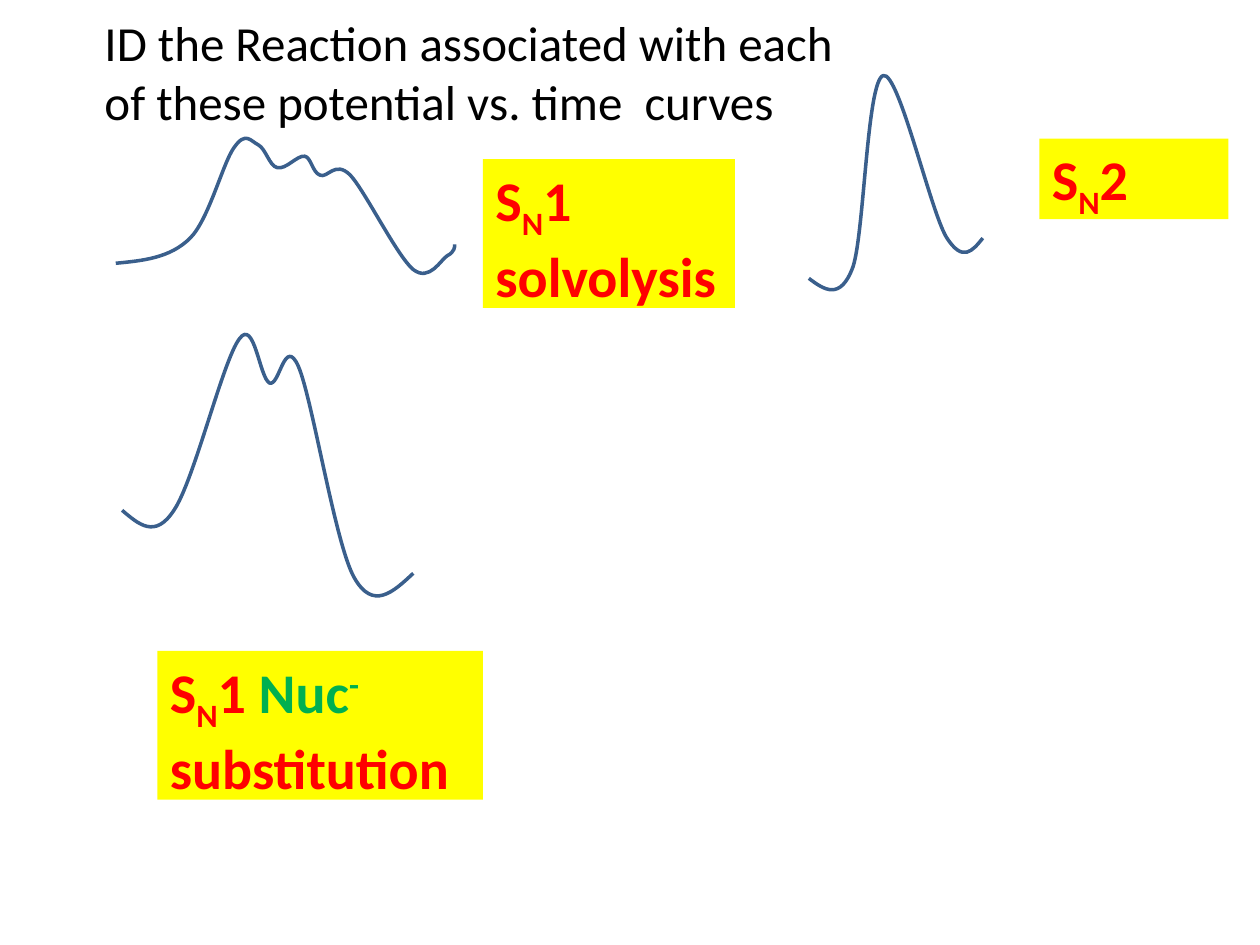
from dataclasses import dataclass

from lxml.etree import SubElement
from pptx import Presentation
from pptx.dml.color import RGBColor as Color
from pptx.enum.shapes import MSO_SHAPE as Shape
from pptx.enum.text import MSO_ANCHOR as Anchor, MSO_AUTO_SIZE as AutoSize, PP_ALIGN as Align
from pptx.oxml.ns import qn
from pptx.util import Pt


@dataclass(frozen=True)
class Theme:
    font: str = "Calibri"
    title_size: int = 28
    label_size: int = 32
    curve_width: int = 2
    ink: Color = Color(0, 0, 0)
    curve: Color = Color(0x3A, 0x5F, 0x8C)
    label_fill: Color = Color(0xFF, 0xFF, 0)
    label_text: Color = Color(0xFF, 0, 0)
    nucleophile: Color = Color(0, 0xB0, 0x50)


THEME = Theme()
SUBSCRIPT, SUPERSCRIPT = -25, 30

# Each curve: its box, then a start point followed by three points per Bézier segment.
SOLVOLYSIS_CURVE = (66.2, 79.2, 194.4, 77), [
    (66.2, 150.5),
    (81.4, 149), (97.2, 147.6), (108.7, 136.1),
    (119.5, 125.3), (127.4, 92.9), (133.9, 84.2),
    (140.4, 74.9), (143.3, 80.6), (147.6, 82.8),
    (151.9, 85), (154.1, 95), (158.4, 95.8),
    (163.4, 97.2), (169.9, 88.6), (174.2, 89.3),
    (177.8, 90), (178.6, 98.6), (182.9, 100.1),
    (187.2, 102.2), (191.5, 91.4), (200.2, 100.1),
    (208.8, 109.4), (226.8, 146.2), (236.2, 154.1),
    (245.5, 161.3), (252, 148.3), (255.6, 146.2),
    (259.9, 144), (259.9, 141.1), (259.9, 139.7),
]
SN2_CURVE = (462.2, 43.2, 99.4, 122.4), [
    (462.2, 159.1),
    (470.9, 165.6), (480.2, 172.1), (487.4, 152.6),
    (493.9, 133.2), (495.4, 46.1), (504.7, 43.2),
    (513.4, 40.3), (531.4, 119.5), (540.7, 135.4),
    (550.1, 150.5), (555.8, 143.3), (561.6, 136.1),
]
SUBSTITUTION_CURVE = (69.8, 190.8, 165.6, 149.8), [
    (69.8, 291.6),
    (79.2, 299.5), (88.6, 308.2), (99.4, 291.6),
    (110.9, 275), (127.4, 205.9), (136.8, 193.7),
    (145.4, 181.4), (148.3, 216), (154.1, 218.9),
    (159.8, 221), (162.7, 191.5), (170.6, 209.5),
    (178.6, 228.2), (191.5, 310.3), (202.3, 329.8),
    (213.1, 349.2), (224.6, 338.4), (236.2, 327.6),
]

# Each label: its box, then runs of text, colour and baseline shift in percent.
SN_RUNS = [("S", THEME.label_text, 0), ("N", THEME.label_text, SUBSCRIPT)]
LABELS = [
    ((276, 91, 144, 85), SN_RUNS + [("1 solvolysis", THEME.label_text, 0)]),
    ((594, 79.2, 108, 46), SN_RUNS + [("2", THEME.label_text, 0)]),
    ((90, 372, 186, 85), SN_RUNS + [
        ("1 ", THEME.label_text, 0),
        ("Nuc", THEME.nucleophile, 0),
        ("-", THEME.nucleophile, SUPERSCRIPT),
        (" substitution", THEME.label_text, 0),
    ]),
]


class SlideBuilder:
    def __init__(self, slide, theme):
        self.slide = slide
        self.theme = theme

    def format_text(self, shape, size, bold):
        frame = shape.text_frame
        frame.word_wrap = True
        frame.auto_size = AutoSize.NONE
        frame.vertical_anchor = Anchor.TOP
        paragraph = frame.paragraphs[0]
        paragraph.alignment = Align.LEFT
        font = paragraph.font
        font.name, font.size, font.bold = self.theme.font, Pt(size), bold
        return paragraph

    def title(self, box, text):
        shape = self.slide.shapes.title
        shape.left, shape.top, shape.width, shape.height = map(Pt, box)
        shape.text_frame.text = text
        paragraph = self.format_text(shape, self.theme.title_size, False)
        paragraph.font.color.rgb = self.theme.ink

    def label(self, box, runs):
        shape = self.slide.shapes.add_shape(Shape.RECTANGLE, *map(Pt, box))
        shape.shadow.inherit = False
        shape.fill.solid()
        shape.fill.fore_color.rgb = self.theme.label_fill
        shape.line.fill.background()
        paragraph = self.format_text(shape, self.theme.label_size, True)
        for text, color, baseline in runs:
            run = paragraph.add_run()
            run.text = text
            run.font.color.rgb = color
            if baseline:
                run.font._element.set("baseline", str(baseline * 1000))

    def curve(self, box, points):
        """Draw a smooth open line; the freeform's outline becomes cubic segments."""
        left, top, width, height = map(Pt, box)
        builder = self.slide.shapes.build_freeform(left, top)
        builder.add_line_segments([(left + width, top + height)], close=False)
        shape = builder.convert_to_shape()
        shape.shadow.inherit = False
        shape.fill.background()
        shape.line.color.rgb = self.theme.curve
        shape.line.width = Pt(self.theme.curve_width)

        path = next(shape._element.iter(qn("a:path")))
        for command in list(path):
            path.remove(command)
        segments = [("a:moveTo", points[:1])]
        segments += [("a:cubicBezTo", points[i:i + 3]) for i in range(1, len(points), 3)]
        for tag, vertices in segments:
            command = SubElement(path, qn(tag))
            for x, y in vertices:
                SubElement(command, qn("a:pt"), x=str(Pt(x) - left), y=str(Pt(y) - top))


def main():
    presentation = Presentation()
    presentation.slide_width, presentation.slide_height = Pt(720), Pt(540)
    title_only = presentation.slide_layouts[5]
    builder = SlideBuilder(presentation.slides.add_slide(title_only), THEME)

    for box, points in (SOLVOLYSIS_CURVE, SN2_CURVE, SUBSTITUTION_CURVE):
        builder.curve(box, points)
    builder.title(
        (52.5, 3.6, 440, 75),
        "ID the Reaction associated with each of these potential vs. time  curves",
    )
    for box, runs in LABELS:
        builder.label(box, runs)

    presentation.save("out.pptx")


if __name__ == "__main__":
    main()
